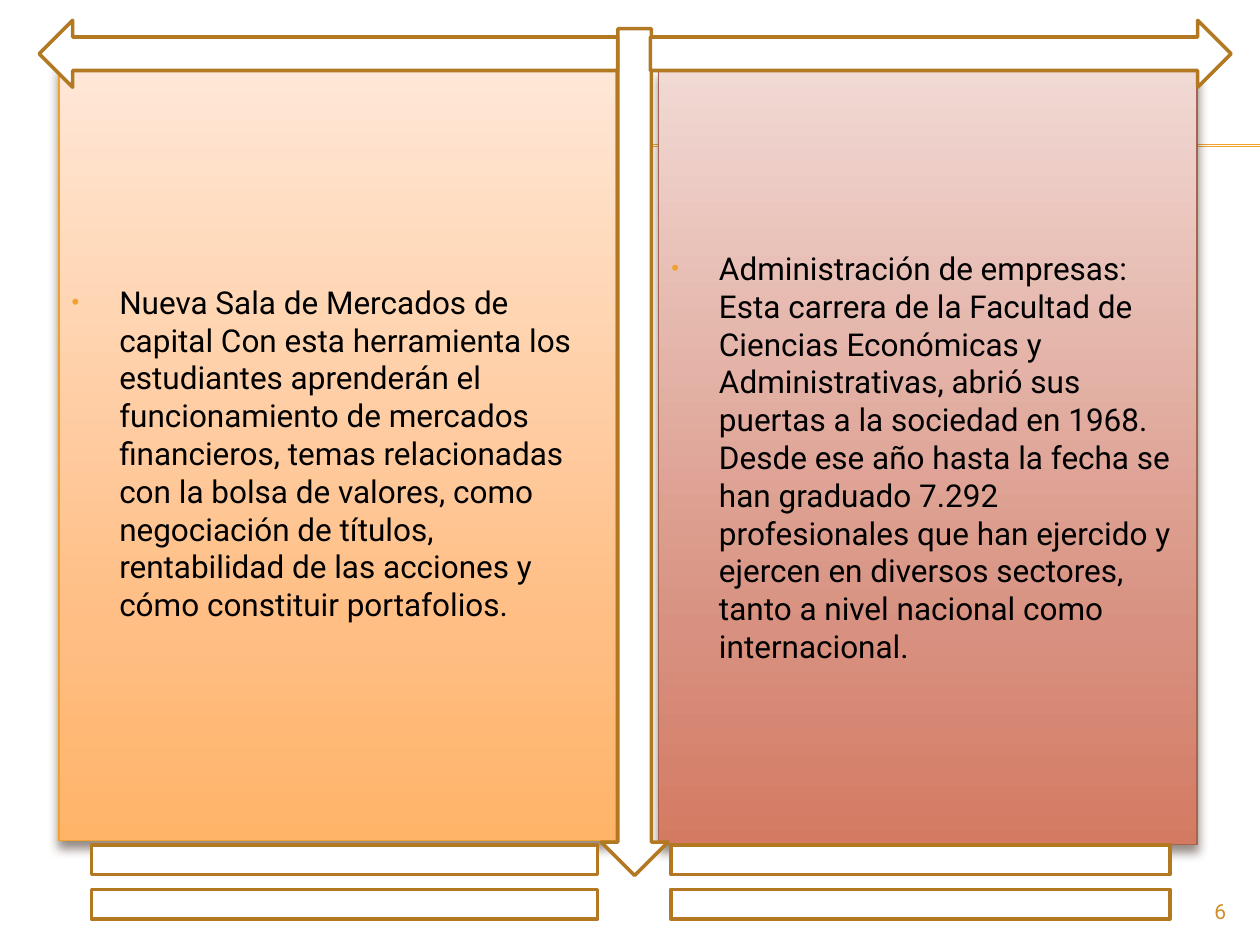
import lxml.etree
import pptx
import pptx.dml.color
import pptx.enum.shapes
import pptx.enum.text
import pptx.oxml
import pptx.oxml.ns
import pptx.util

Cm = pptx.util.Cm
Pt = pptx.util.Pt
RGB = pptx.dml.color.RGBColor
KIND = pptx.enum.shapes.MSO_SHAPE

GOLD = RGB(0xF0, 0xA2, 0x2E)
BROWN = RGB(0xB2, 0x78, 0x22)
RUST = RGB(0xA5, 0x64, 0x4E)
AMBER = RGB(0xD4, 0x8F, 0x29)
SHADE = RGB(0x4E, 0x3B, 0x30)
WHITE = RGB(0xFF, 0xFF, 0xFF)
BLACK = RGB(0, 0, 0)
PEACH = [(0, RGB(0xFF, 0xE7, 0xD7)), (72, RGB(0xFF, 0xBE, 0x84)), (100, RGB(0xFF, 0xB4, 0x68))]
CLAY = [(0, RGB(0xF1, 0xD9, 0xD4)), (72, RGB(0xD8, 0x91, 0x80)), (100, RGB(0xD4, 0x7A, 0x62))]

MARKET = (
    "Nueva Sala de Mercados de capital Con esta herramienta los estudiantes "
    "aprenderán el funcionamiento de mercados financieros, temas relacionadas "
    "con la bolsa de valores, como negociación de títulos, rentabilidad de las "
    "acciones y cómo constituir portafolios."
)
CAREER = (
    "Administración de empresas: Esta carrera de la Facultad de Ciencias "
    "Económicas y Administrativas, abrió sus puertas a la sociedad en 1968. "
    "Desde ese año hasta la fecha se han graduado 7.292 profesionales que han "
    "ejercido y ejercen en diversos sectores, tanto a nivel nacional como "
    "internacional."
)


def node(root, tag, **attrs):
    """Add a DrawingML child with the given attributes."""
    item = lxml.etree.SubElement(root, pptx.oxml.ns.qn("a:" + tag))
    for name, value in attrs.items():
        item.set(name, str(value))
    return item


def place(shape, box):
    """Set a shape's box, given in centimetres."""
    shape.left, shape.top, shape.width, shape.height = map(Cm, box)


def style(para, size, color):
    """Format the runs of a paragraph."""
    for run in para.runs:
        run.font.name = "Roboto"
        run.font.size = Pt(size)
        run.font.color.rgb = color


def blend(shape, stops):
    """Fill a shape with a downward gradient."""
    shape.fill.gradient()
    shape.fill.gradient_angle = 270
    group = shape.fill._fill._gradFill.find(pptx.oxml.ns.qn("a:gsLst"))
    for old in list(group):
        group.remove(old)
    for pos, color in stops:
        node(node(group, "gs", pos=pos * 1000), "srgbClr", val=color)


def shadow(shape):
    """Give a shape a soft shadow below."""
    effects = node(shape._element.spPr, "effectLst")
    outer = node(effects, "outerShdw", blurRad=Pt(6), dist=Pt(4),
                 dir=5400000, rotWithShape=0)
    node(node(outer, "srgbClr", val=SHADE), "alpha", val=60000)


def bullet(para):
    """Give a paragraph a small gold bullet and hanging indent."""
    para.space_before = Pt(3.6)
    props = para._p.get_or_add_pPr()
    props.set("marL", str(Cm(0.96)))
    props.set("indent", str(-Cm(0.96)))
    node(node(props, "buClr"), "srgbClr", val=GOLD)
    node(props, "buSzPct", val=70000)
    node(props, "buFont", typeface="Arial")
    node(props, "buChar", char="•")


def panel(holder, box, text, stops, edge):
    """Turn a body placeholder into a shaded panel."""
    place(holder, box)
    blend(holder, stops)
    holder.line.color.rgb = edge
    holder.line.width = Pt(0.79)
    shadow(holder)
    frame = holder.text_frame
    frame.text = text
    frame.word_wrap = True
    frame.auto_size = pptx.enum.text.MSO_AUTO_SIZE.NONE
    frame.vertical_anchor = pptx.enum.text.MSO_ANCHOR.MIDDLE
    bullet(frame.paragraphs[0])
    style(frame.paragraphs[0], 18, BLACK)


def rules(slide, box):
    """Draw the double gold rule behind everything else."""
    left, top, width, gap = box
    for y in (top, top + gap):
        line = slide.shapes.add_connector(
            pptx.enum.shapes.MSO_CONNECTOR.STRAIGHT,
            Cm(left), Cm(y), Cm(left + width), Cm(y))
        line.line.color.rgb = GOLD
        line.line.width = Pt(0.75)
        node(line._element.spPr, "effectLst")
        slide.shapes._spTree.insert(2, line._element)


def arrows(slide, box):
    """Draw the white arrows and bars around the panels."""
    left, top, width, height = box
    base = height - 2.54
    parts = [
        (KIND.DOWN_ARROW, 12.12, 0.58, 1.35, 17.07),
        (KIND.RIGHT_ARROW, 13.11, 0.41, 11.71, 1.35),
        (KIND.LEFT_ARROW, 0.79, 0.41, 11.66, 1.35),
        (KIND.MATH_EQUAL, 0, base, 13.89, 2.54),
        (KIND.MATH_EQUAL, width - 13.69, base, 13.69, 2.54),
    ]
    for kind, x, y, wide, high in parts:
        shape = slide.shapes.add_shape(
            kind, Cm(left + x), Cm(top + y), Cm(wide), Cm(high))
        shape.shadow.inherit = False
        shape.fill.solid()
        shape.fill.fore_color.rgb = WHITE
        shape.line.color.rgb = BROWN
        shape.line.width = Pt(2)


def number(slide, box, text):
    """Write the page number at the right of its box."""
    label = slide.shapes.add_textbox(*map(Cm, box))
    label.text_frame.word_wrap = True
    label.text_frame.text = text
    para = label.text_frame.paragraphs[0]
    para.alignment = pptx.enum.text.PP_ALIGN.RIGHT
    style(para, 12, AMBER)


def main():
    """Build the slide and save it."""
    deck = pptx.Presentation()
    deck.slide_width, deck.slide_height = Cm(25.4), Cm(19.05)
    slide = deck.slides.add_slide(deck.slide_layouts[3])
    title, first, second = slide.placeholders
    title._element.getparent().remove(title._element)
    rules(slide, (1.42, 2.92, 23.98, 0.03))
    panel(first, (1.19, 1.32, 11.23, 15.62), MARKET, PEACH, GOLD)
    panel(second, (13.28, 1.4, 10.85, 15.62), CAREER, CLAY, RUST)
    arrows(slide, (0, 0, 25.4, 19.05))
    number(slide, (22.86, 17.98, 2.11, 0.69), "6")
    deck.save("out.pptx")


if __name__ == "__main__":
    main()
